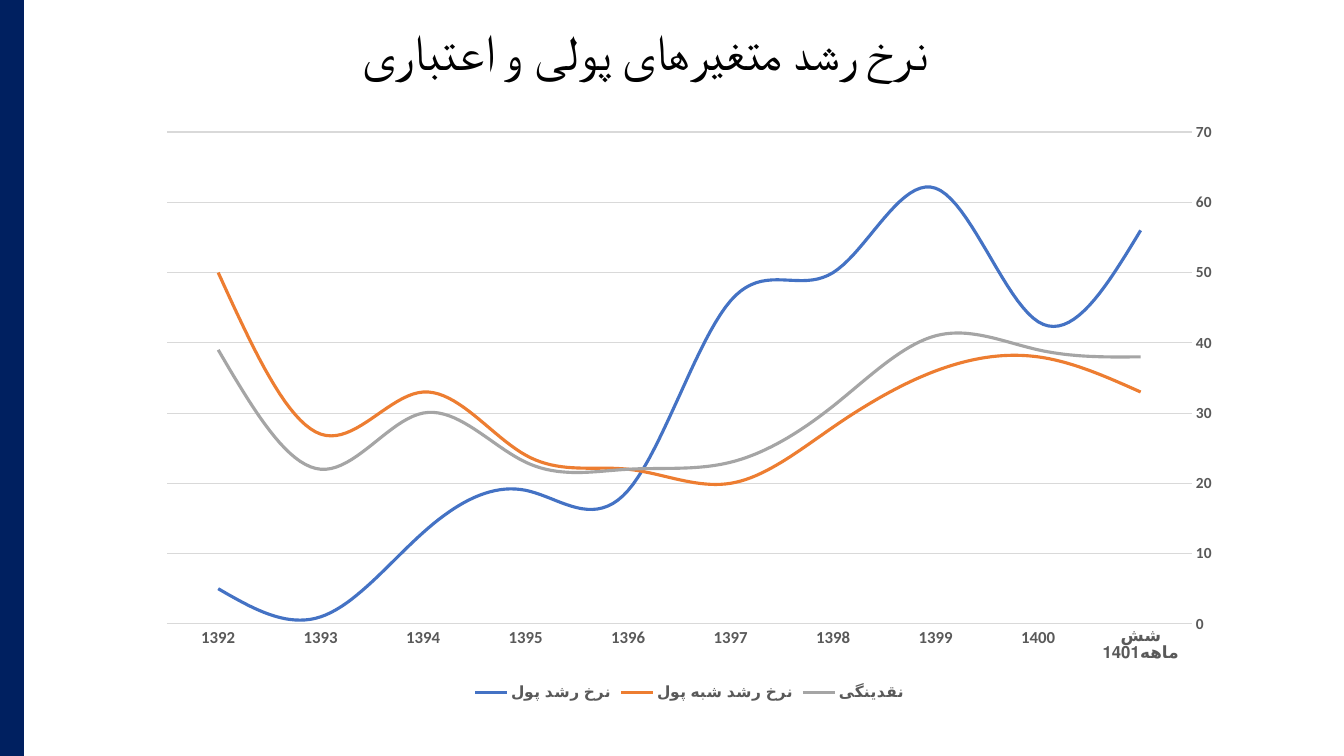
from dataclasses import dataclass

from lxml import etree
from pptx import Presentation
from pptx import util as u
from pptx.chart.data import CategoryChartData
from pptx.dml.color import RGBColor
from pptx.enum import chart as ch, shapes, text
from pptx.oxml.ns import qn

TITLE = "نرخ رشد متغیرهای پولی و اعتباری"
YEARS = ["شش ماهه1401"] + [str(year) for year in range(1400, 1391, -1)]
RATES = {
    "نرخ رشد پول": (56, 43, 62, 50, 46, 19, 19, 13, 1, 5),
    "نرخ رشد شبه پول": (33, 38, 36, 28, 20, 22, 24, 33, 27, 50),
    "نقدینگی": (38, 39, 41, 31, 23, 22, 23, 30, 22, 39),
}
PAGE = (33.87, 19.05)
BAR = (0, 0, 0.58, 19.05)
HEAD = (5.87, 0.38, 20.83, 1.8)
PLOT = (3.66, 2.79, 27.43, 14.96)


@dataclass(frozen=True)
class Theme:
    face: str = "Calibri"
    navy: str = "002060"
    ink: str = "000000"
    grey: str = "595959"
    grid: str = "D9D9D9"
    lines: tuple = ("4472C4", "ED7D31", "A5A5A5")
    head: int = 36
    base: int = 10
    label: int = 11
    year: int = 12


LOOK = Theme()


def cm(box):
    return [u.Cm(n) for n in box]


def style(font, size, color, bold=False):
    font.name, font.size, font.bold = LOOK.face, u.Pt(size), bold
    font.color.rgb = RGBColor.from_string(color)


def stroke(line, color, width):
    line.color.rgb = RGBColor.from_string(color)
    line.width = u.Pt(width)


def add_bar(slide):
    bar = slide.shapes.add_shape(shapes.MSO_SHAPE.RECTANGLE, *cm(BAR))
    bar.shadow.inherit = False
    bar.fill.solid()
    bar.fill.fore_color.rgb = RGBColor.from_string(LOOK.navy)
    stroke(bar.line, LOOK.navy, 1)


def add_title(slide):
    title = slide.shapes.title
    title.left, title.top, title.width, title.height = cm(HEAD)
    frame = title.text_frame
    frame.word_wrap = True
    frame.auto_size = text.MSO_AUTO_SIZE.SHAPE_TO_FIT_TEXT
    para = frame.paragraphs[0]
    para.alignment = text.PP_ALIGN.CENTER
    para._p.get_or_add_pPr().set("rtl", "1")
    run = para.add_run()
    run.text = TITLE
    style(run.font, LOOK.head, LOOK.ink)
    # Persian letters take the complex-script face
    script = etree.SubElement(run._r.get_or_add_rPr(), qn("a:cs"))
    script.set("typeface", LOOK.face)


def set_axis(axis, size):
    axis.major_tick_mark = axis.minor_tick_mark = ch.XL_TICK_MARK.NONE
    style(axis.tick_labels.font, size, LOOK.grey, True)


def add_rates(slide):
    data = CategoryChartData(number_format="0")
    data.categories = YEARS
    for name, rates in RATES.items():
        data.add_series(name, rates)
    chart = slide.shapes.add_chart(
        ch.XL_CHART_TYPE.LINE, *cm(PLOT), data).chart
    chart.has_title = False
    style(chart.font, LOOK.base, LOOK.ink)

    years, scale = chart.category_axis, chart.value_axis
    set_axis(years, LOOK.year)
    years.reverse_order = True
    stroke(years.format.line, LOOK.grid, 0.75)
    set_axis(scale, LOOK.label)
    scale.minimum_scale, scale.maximum_scale, scale.major_unit = 0, 70, 10
    scale.format.line.fill.background()
    stroke(scale.major_gridlines.format.line, LOOK.grid, 0.75)

    chart.has_legend = True
    chart.legend.position = ch.XL_LEGEND_POSITION.BOTTOM
    chart.legend.include_in_layout = False
    style(chart.legend.font, LOOK.label, LOOK.grey, True)

    plot = chart.plots[0]
    plot.vary_by_categories = False
    for series, color in zip(plot.series, LOOK.lines):
        series.smooth = True
        stroke(series.format.line, color, 2.25)


def main():
    deck = Presentation()
    deck.slide_width, deck.slide_height = cm(PAGE)
    slide = deck.slides.add_slide(deck.slide_layouts.get_by_name("Title Only"))
    add_bar(slide)
    add_title(slide)
    add_rates(slide)
    deck.save("out.pptx")


if __name__ == "__main__":
    main()
